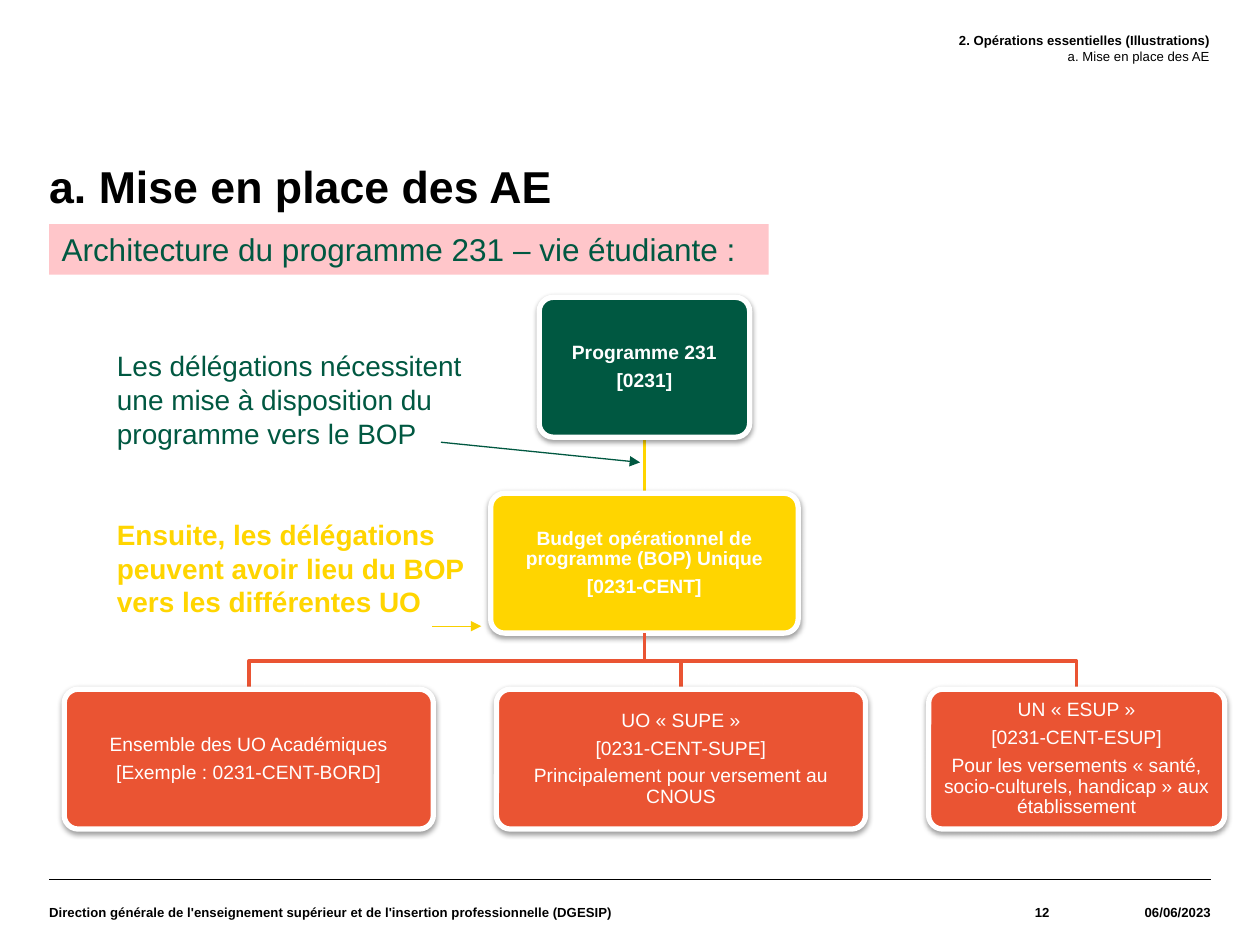
from lxml import etree
from pptx import Presentation
from pptx.dml.color import RGBColor
from pptx.enum.shapes import MSO_CONNECTOR, MSO_SHAPE
from pptx.enum.text import MSO_ANCHOR, PP_ALIGN
from pptx.oxml.ns import qn
from pptx.util import Inches, Pt

BLACK = RGBColor(0x00, 0x00, 0x00)
WHITE = RGBColor(0xFF, 0xFF, 0xFF)
GREEN = RGBColor(0x00, 0x58, 0x41)
YELLOW = RGBColor(0xFF, 0xD5, 0x00)
GOLD = RGBColor(0xF9, 0xD0, 0x00)
ORANGE = RGBColor(0xEA, 0x54, 0x33)
PINK = RGBColor(0xFF, 0xC6, 0xCA)
LEFT, CENTER, RIGHT = PP_ALIGN.LEFT, PP_ALIGN.CENTER, PP_ALIGN.RIGHT
TOP, MIDDLE = MSO_ANCHOR.TOP, MSO_ANCHOR.MIDDLE
STRAIGHT = MSO_CONNECTOR.STRAIGHT
RECT, ROUND = MSO_SHAPE.RECTANGLE, MSO_SHAPE.ROUNDED_RECTANGLE

SMALL = {"size": Pt(7.5), "bold": True}
HEAD = {"size": Pt(25.5), "bold": True}
BAND = {"size": Pt(18)}
NOTE = {"size": Pt(16)}
NODE = {"size": Pt(11)}
TIGHT = {"line_spacing": 0.9}
CARD = {"alignment": CENTER, "line_spacing": 0.9, "space_after": Pt(4)}


def apply(item, look):
    """Set each attribute in the look on the item."""
    for name, value in look.items():
        setattr(item, name, value)


def write(shape, lines, font, color, para=None, pad=(0.1, 0.05), anchor=TOP):
    """Fill a shape with paragraphs of one look."""
    frame = shape.text_frame
    wide, high = map(Inches, pad)
    apply(frame, {"word_wrap": True, "vertical_anchor": anchor,
                  "margin_left": wide, "margin_right": wide,
                  "margin_top": high, "margin_bottom": high})
    for i, line in enumerate(lines):
        part = frame.add_paragraph() if i else frame.paragraphs[0]
        apply(part, {"alignment": LEFT, **(para or {})})
        run = part.add_run()
        run.text = line
        apply(run.font, {"name": "Arial", **font})
        run.font.color.rgb = color


def add_text(slide, box, lines, font, color, **look):
    """Place a text box."""
    shape = slide.shapes.add_textbox(*map(Inches, box))
    write(shape, lines, font, color, **look)
    return shape


def add_line(slide, start, end, color, width, arrow=False):
    """Draw a straight line, with an arrowhead if asked."""
    line = slide.shapes.add_connector(STRAIGHT, *map(Inches, start + end))
    line.line.color.rgb = color
    line.line.width = Pt(width)
    props = line._element.spPr
    if arrow:
        etree.SubElement(props.find(qn("a:ln")), qn("a:tailEnd"), type="triangle")
    etree.SubElement(props, qn("a:effectLst"))


def add_elbow(slide, start, end, color):
    """Draw a stepped link that turns halfway down."""
    (x, y), (to_x, to_y) = start, end
    mid = (y + to_y) / 2
    path = [(x, mid), (to_x, mid), end]
    build = slide.shapes.build_freeform(Inches(x), Inches(y))
    build.add_line_segments([tuple(map(Inches, p)) for p in path], close=False)
    link = build.convert_to_shape()
    link.shadow.inherit = False
    link.fill.background()
    link.line.color.rgb = color
    link.line.width = Pt(2)


def add_shadow(shape):
    """Give a shape a soft shadow below it."""
    shape.shadow.inherit = False
    effects = shape._element.spPr.find(qn("a:effectLst"))
    outer = etree.SubElement(effects, qn("a:outerShdw"), blurRad=str(Pt(3.1)),
                             dist=str(Pt(1.6)), dir="5400000", rotWithShape="0")
    tint = etree.SubElement(outer, qn("a:srgbClr"), val=str(BLACK))
    etree.SubElement(tint, qn("a:alpha"), val="38000")


def add_node(slide, box, lines, color, bold=False):
    """Place one rounded card of the tree."""
    card = slide.shapes.add_shape(ROUND, *map(Inches, box))
    card.adjustments[0] = 0.1
    card.fill.solid()
    card.fill.fore_color.rgb = color
    card.line.color.rgb = WHITE
    card.line.width = Pt(3)
    add_shadow(card)
    write(card, lines, {**NODE, "bold": bold}, WHITE, CARD, (0.05, 0.05), MIDDLE)


def add_tree(slide, box):
    """Draw the three levels of the budget tree."""
    left, top, width, height = box
    high = 1.11
    step = (height - high) / 2
    gap = 0.5
    mid = left + width / 2
    rows = [top + step * i for i in range(3)]
    trunk = [
        (1.67, GREEN, ["Programme 231", "[0231]"]),
        (2.44, YELLOW, ["Budget opérationnel de programme (BOP) Unique",
                        "[0231-CENT]"]),
    ]
    leaves = [
        (2.93, ["Ensemble des UO Académiques", "[Exemple : 0231-CENT-BORD]"]),
        (2.93, ["UO «\u00a0SUPE\u00a0»", "[0231-CENT-SUPE]",
                "Principalement pour versement au CNOUS"]),
        (2.35, ["UN «\u00a0ESUP\u00a0»", "[0231-CENT-ESUP]",
                "Pour les versements «\u00a0santé, socio-culturels, "
                "handicap\u00a0» aux établissement"]),
    ]
    add_line(slide, (mid, rows[0] + high), (mid, rows[1]), YELLOW, 2)
    for y, (wide, color, lines) in zip(rows, trunk):
        add_node(slide, (mid - wide / 2, y, wide, high), lines, color, True)
    x = left
    for wide, lines in leaves:
        add_elbow(slide, (mid, rows[1] + high), (x + wide / 2, rows[2]), ORANGE)
        add_node(slide, (x, rows[2], wide, high), lines, ORANGE)
        x += wide + gap


def add_header(slide, box):
    """Place the section name and its lettered part."""
    lines = ["2. Opérations essentielles (Illustrations)",
             "a. Mise en place des AE"]
    shape = add_text(slide, box, lines, SMALL, BLACK,
                     para={"alignment": RIGHT}, pad=(0, 0))
    shape.text_frame.paragraphs[1].runs[0].font.bold = False


def add_title(slide, box):
    """Place the title and the band below it."""
    left, top, width, height = box
    add_text(slide, box, ["a. Mise en place des AE"], HEAD, BLACK,
             para=TIGHT, pad=(0, 0))
    band = slide.shapes.add_shape(
        RECT, *map(Inches, (left, top + 0.47, 5.71, 0.4)))
    band.shadow.inherit = False
    band.fill.solid()
    band.fill.fore_color.rgb = PINK
    band.line.fill.background()
    write(band, ["Architecture du programme 231 – vie étudiante :"], BAND, GREEN)


def add_notes(slide, box):
    """Place the two remarks and their arrows."""
    left, top, width, height = box
    low = top + 1.34
    add_text(slide, (left, top, width, 0.91),
             ["Les délégations nécessitent une mise à disposition du "
              "programme vers le BOP"], NOTE, GREEN)
    add_text(slide, (left, low, 3.07, 0.91),
             ["Ensuite, les délégations peuvent avoir lieu du BOP vers les "
              "différentes UO"], {**NOTE, "bold": True}, YELLOW)
    add_line(slide, (left + 2.67, top + 0.79), (left + 4.25, top + 0.95),
             GREEN, 0.75, True)
    add_line(slide, (left + 2.6, low + 0.91), (left + 2.99, low + 0.91),
             GOLD, 0.75, True)


def add_footer(slide, box):
    """Place the rule, the body name, the page and the date."""
    x, top, width, height = box
    add_line(slide, (x, top), (x + width, top), BLACK, 0.8)
    parts = [
        (6.46, LEFT, "Direction générale de l'enseignement supérieur et de "
                     "l'insertion professionnelle (DGESIP)"),
        (1.48, RIGHT, "12"),
        (1.28, RIGHT, "06/06/2023"),
    ]
    for wide, align, words in parts:
        add_text(slide, (x, top, wide, height), [words], SMALL, BLACK,
                 para={"alignment": align}, pad=(0, 0), anchor=MIDDLE)
        x += wide


def main():
    """Build and save the slide."""
    deck = Presentation()
    apply(deck, {"slide_width": Inches(10), "slide_height": Inches(7.5)})
    slide = deck.slides.add_slide(deck.slide_layouts[6])
    add_header(slide, (3.62, 0.26, 5.98, 0.52))
    add_title(slide, (0.39, 1.31, 9.21, 1.05))
    add_tree(slide, (0.51, 2.36, 9.21, 4.22))
    add_notes(slide, (0.83, 2.72, 3.31, 2.25))
    add_footer(slide, (0.39, 6.98, 9.22, 0.52))
    deck.save("out.pptx")


if __name__ == "__main__":
    main()
